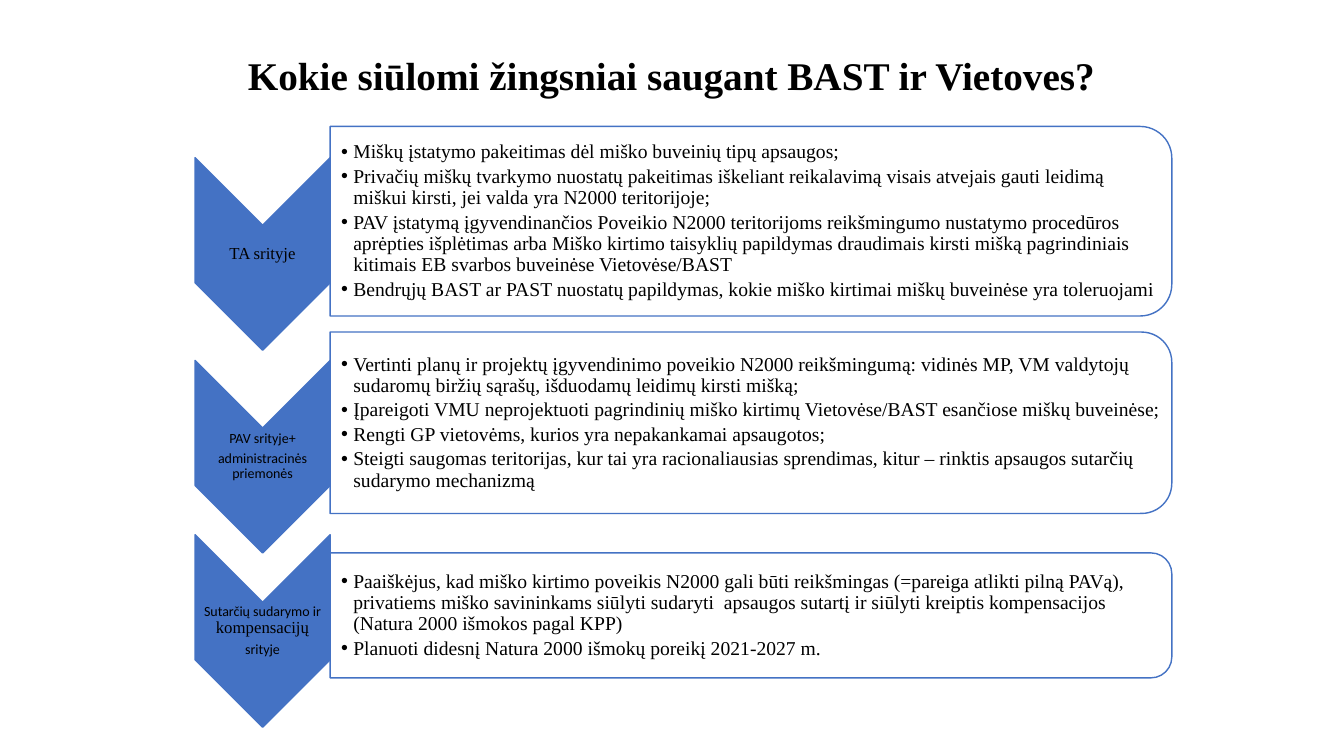
from dataclasses import dataclass

from lxml.etree import SubElement
from pptx import Presentation
from pptx.dml.color import RGBColor
from pptx.enum.shapes import MSO_SHAPE as Preset
from pptx.enum.text import MSO_ANCHOR as Anchor, MSO_AUTO_SIZE as AutoSize, PP_ALIGN as Align
from pptx.oxml.ns import qn
from pptx.util import Pt


@dataclass(frozen=True)
class Theme:
    blue: RGBColor = RGBColor(0x44, 0x72, 0xC4)
    white: RGBColor = RGBColor(0xFF, 0xFF, 0xFF)
    black: RGBColor = RGBColor(0, 0, 0)
    serif: str = "Times New Roman"
    sans: str = "Calibri"
    title_size: int = 28
    list_size: int = 14
    label_size: int = 12
    small_size: int = 10


THEME = Theme()
SERIF = (THEME.serif, THEME.label_size)
SANS = (THEME.sans, THEME.small_size)

CHEVRON_LEFT, CHEVRON_WIDTH, CHEVRON_HEIGHT = 139.3, 96.5, 137.5
LABEL_HEIGHT = 41
PANEL_LEFT, PANEL_WIDTH = 235.8, 601.2
LIST_WIDTH, LIST_INSET, BULLET_INDENT = 595.5, 7.9, 8.64

STEPS = [
    {
        "chevron_middle": 181.4,
        "panel_middle": 158,
        "panel_height": 135.4,
        "label": [[("TA srityje", SERIF)]],
        "items": [
            "Miškų įstatymo pakeitimas dėl miško buveinių tipų apsaugos;",
            "Privačių miškų tvarkymo nuostatų pakeitimas iškeliant reikalavimą visais atvejais "
            "gauti leidimą miškui kirsti, jei valda yra N2000 teritorijoje;",
            "PAV įstatymą įgyvendinančios Poveikio N2000 teritorijoms reikšmingumo nustatymo "
            "procedūros aprėpties išplėtimas arba Miško kirtimo taisyklių papildymas draudimais "
            "kirsti mišką pagrindiniais kitimais EB svarbos buveinėse Vietovėse/BAST",
            "Bendrųjų BAST ar PAST nuostatų papildymas, kokie miško kirtimai miškų buveinėse "
            "yra toleruojami",
        ],
    },
    {
        "chevron_middle": 326.2,
        "panel_middle": 302,
        "panel_height": 129.6,
        "label": [[("PAV srityje+", SANS)], [("administracinės priemonės", SANS)]],
        "items": [
            "Vertinti planų ir projektų įgyvendinimo poveikio N2000 reikšmingumą: vidinės MP, "
            "VM valdytojų sudaromų biržių sąrašų, išduodamų leidimų kirsti mišką;",
            "Įpareigoti VMU neprojektuoti pagrindinių miško kirtimų Vietovėse/BAST esančiose "
            "miškų buveinėse;",
            "Rengti GP vietovėms, kurios yra nepakankamai apsaugotos;",
            "Steigti saugomas teritorijas, kur tai yra racionaliausias sprendimas, kitur – "
            "rinktis apsaugos sutarčių sudarymo mechanizmą",
        ],
    },
    {
        "chevron_middle": 450.7,
        "panel_middle": 439.6,
        "panel_height": 89.3,
        "label": [
            [("Sutarčių sudarymo ir ", SANS), ("kompensacijų", SERIF)],
            [("srityje", SANS)],
        ],
        "items": [
            "Paaiškėjus, kad miško kirtimo poveikis N2000 gali būti reikšmingas (=pareiga atlikti "
            "pilną PAVą), privatiems miško savininkams siūlyti sudaryti  apsaugos sutartį ir "
            "siūlyti kreiptis kompensacijos (Natura 2000 išmokos pagal KPP)",
            "Planuoti didesnį Natura 2000 išmokų poreikį 2021-2027 m.",
        ],
    },
]


def place(shape, left, top, width, height):
    shape.left, shape.top = Pt(left), Pt(top)
    shape.width, shape.height = Pt(width), Pt(height)


def prepare_frame(frame, left_inset, inset):
    frame.word_wrap = True
    frame.auto_size = AutoSize.NONE
    frame.vertical_anchor = Anchor.MIDDLE
    frame.margin_left = Pt(left_inset)
    frame.margin_top = frame.margin_right = frame.margin_bottom = Pt(inset)


def set_font(font, name, size, bold=False):
    font.name, font.size, font.bold = name, Pt(size), bold
    font.color.rgb = THEME.black


def set_spacing(paragraph, line, after):
    paragraph.line_spacing = line
    paragraph.space_before = Pt(0)
    paragraph.space_after = Pt(after)


def add_turned_shape(slide, preset, left, middle, width, height, fill):
    shape = slide.shapes.add_shape(
        preset, Pt(left + (width - height) / 2), Pt(middle - width / 2), Pt(height), Pt(width)
    )
    shape.rotation = 90
    shape.shadow.inherit = False
    shape.fill.solid()
    shape.fill.fore_color.rgb = fill
    shape.line.color.rgb = THEME.blue
    shape.line.width = Pt(1)
    return shape


def fill_title(title, left, top, width, height):
    place(title, left, top, width, height)
    prepare_frame(title.text_frame, 0, 0)
    title.text_frame.text = "Kokie siūlomi žingsniai saugant BAST ir Vietoves?"
    paragraph = title.text_frame.paragraphs[0]
    paragraph.alignment = Align.CENTER
    set_spacing(paragraph, 0.93, 0)
    set_font(paragraph.font, THEME.serif, THEME.title_size, True)


def add_chevron(slide, label, left, middle, width, height):
    add_turned_shape(slide, Preset.CHEVRON, left, middle, width, height, THEME.blue)
    box = slide.shapes.add_textbox(
        Pt(left), Pt(middle - LABEL_HEIGHT / 2), Pt(width), Pt(LABEL_HEIGHT)
    )
    frame = box.text_frame
    prepare_frame(frame, 0.7, 0.7)
    for index, runs in enumerate(label):
        paragraph = frame.add_paragraph() if index else frame.paragraphs[0]
        paragraph.alignment = Align.CENTER
        set_spacing(paragraph, 0.9, 3.5)
        for text, (name, size) in runs:
            run = paragraph.add_run()
            run.text = text
            if len(runs) > 1:
                set_font(run.font, name, size)
        if len(runs) == 1:
            set_font(paragraph.font, *runs[0][1])


def add_panel(slide, body, items, left, middle, width, height):
    panel = add_turned_shape(
        slide, Preset.ROUND_2_SAME_RECTANGLE, left, middle, width, height, THEME.white
    )
    color = panel.fill._xPr.find(qn("a:solidFill"))[0]
    SubElement(color, qn("a:alpha")).set("val", "90000")

    slide.shapes._spTree.append(body._element)
    place(body, left, middle - height / 2, LIST_WIDTH, height)
    frame = body.text_frame
    prepare_frame(frame, LIST_INSET, 0.7)
    for index, item in enumerate(items):
        paragraph = frame.add_paragraph() if index else frame.paragraphs[0]
        paragraph.text = item
        properties = paragraph._p.get_or_add_pPr()
        properties.set("marL", str(Pt(BULLET_INDENT)))
        properties.set("indent", str(-Pt(BULLET_INDENT)))
        SubElement(properties, qn("a:buChar")).set("char", "•")
        paragraph.alignment = Align.LEFT
        set_spacing(paragraph, 0.9, 2.4)
        set_font(paragraph.font, THEME.serif, THEME.list_size)


def main():
    presentation = Presentation()
    presentation.slide_width, presentation.slide_height = Pt(960), Pt(540)
    slide = presentation.slides.add_slide(presentation.slide_layouts.get_by_name("Comparison"))
    title, *bodies = slide.placeholders
    fill_title(title, 128.2, 39.6, 702.7, 31.7)
    for step, body in zip(STEPS, bodies):
        add_chevron(
            slide, step["label"], CHEVRON_LEFT, step["chevron_middle"], CHEVRON_WIDTH, CHEVRON_HEIGHT
        )
        add_panel(
            slide, body, step["items"],
            PANEL_LEFT, step["panel_middle"], PANEL_WIDTH, step["panel_height"],
        )
    for spare in bodies[len(STEPS):]:
        spare._element.getparent().remove(spare._element)
    presentation.save("out.pptx")


if __name__ == "__main__":
    main()
